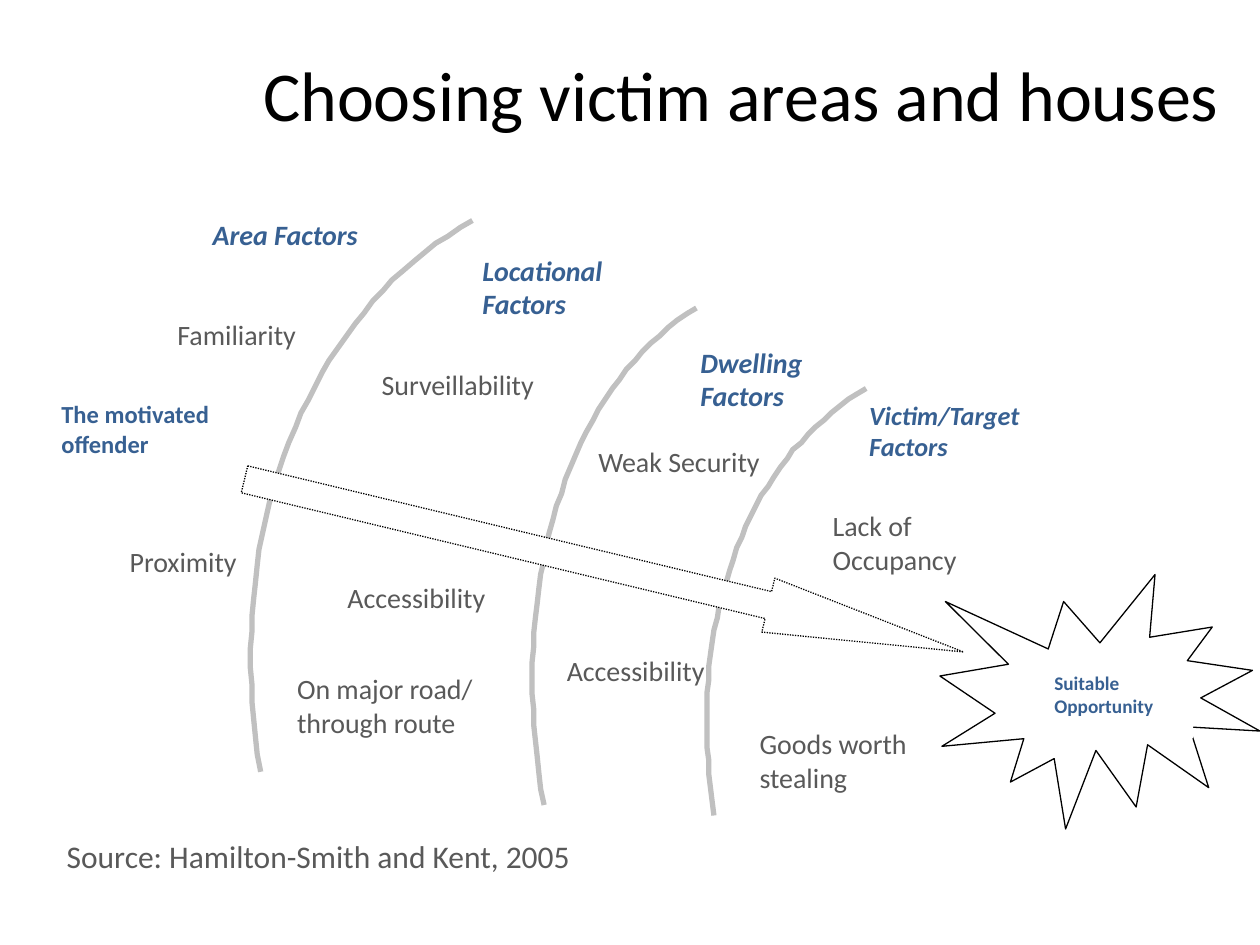
"""Build a slide on how offenders choose victim areas and houses."""
import pptx
import pptx.dml.color
import pptx.enum.dml
import pptx.enum.shapes
import pptx.enum.text
import pptx.util

Pt = pptx.util.Pt
SHAPES = pptx.enum.shapes.MSO_SHAPE
COLOURS = {"white": "FFFFFF", "black": "000000", "heading": "376092",
           "body": "595959", "arc": "C0C0C0"}

presentation = pptx.Presentation()
presentation.slide_width = Pt(720)
presentation.slide_height = Pt(540)
slide = presentation.slides.add_slide(presentation.slide_layouts[6])


def add_filled(kind, left, top, width, height, outlined=False):
    shape = slide.shapes.add_shape(kind, Pt(left), Pt(top), Pt(width), Pt(height))
    shape.shadow.inherit = False
    shape.fill.solid()
    shape.fill.fore_color.rgb = pptx.dml.color.RGBColor.from_string(COLOURS["white"])
    if outlined:
        shape.line.color.rgb = pptx.dml.color.RGBColor.from_string(COLOURS["black"])
        shape.line.width = Pt(0.75)
    else:
        shape.line.fill.background()
    return shape


def write_text(shape, text, size, colour, bold=False, italic=False, wrap=True):
    frame = shape.text_frame
    frame.text = text
    frame.word_wrap = wrap
    frame.vertical_anchor = pptx.enum.text.MSO_ANCHOR.TOP
    for paragraph in frame.paragraphs:
        paragraph.alignment = pptx.enum.text.PP_ALIGN.LEFT
        paragraph.font.name = "Calibri"
        paragraph.font.size = Pt(size)
        paragraph.font.bold = bold
        paragraph.font.italic = italic
        paragraph.font.color.rgb = pptx.dml.color.RGBColor.from_string(COLOURS[colour])


offender = add_filled(SHAPES.RECTANGLE, 28, 224.6, 115.2, 51.8)
write_text(offender, "The motivated offender", 14, "heading", bold=True)

headings = [
    ("Area Factors", 114.5, 121, 16),
    ("Locational\nFactors", 268.6, 141.1, 16),
    ("Dwelling\nFactors", 393.1, 193.7, 16),
    ("Victim/Target Factors", 489.6, 224.6, 15),
]
for text, left, top, size in headings:
    heading = add_filled(SHAPES.RECTANGLE, left, top, 115.2, 51.8)
    write_text(heading, text, size, "heading", bold=True, italic=True)

factors = [
    ("Familiarity", 94.3, 177.8, 31),
    ("Accessibility", 191.5, 328.3, 51.8),
    ("Surveillability", 211, 206.6, 51.8),
    ("Proximity", 67, 307.4, 51.8),
    ("On major road/ through route", 162.7, 380.2, 51.8),
    ("Accessibility", 316.8, 370.1, 51.8),
    ("Weak Security", 334.8, 250.6, 51.8),
    ("Lack of Occupancy", 468.7, 287.3, 41.8),
    ("Goods worth stealing", 427, 411.8, 51.8),
]
for text, left, top, height in factors:
    factor = add_filled(SHAPES.RECTANGLE, left, top, 115.2, height)
    write_text(factor, text, 16, "body")

add_filled(SHAPES.EXPLOSION1, 537.1, 328.3, 182.9, 145.4, outlined=True)

arcs = [
    [(149, 441.4), (126, 305.3), (175, 179.3), (270, 126)],
    [(311, 460), (288.7, 337), (324, 221.8), (398.2, 175.7)],
    [(408.2, 465.8), (391, 360), (424.8, 262.8), (495.4, 221.8)],
]
steps = 40
for controls in arcs:
    points = []
    for step in range(steps + 1):
        t = step / steps
        weights = [(1 - t) ** 3, 3 * t * (1 - t) ** 2, 3 * t ** 2 * (1 - t), t ** 3]
        points.append([sum(weight * control[axis] for weight, control in zip(weights, controls))
                       for axis in (0, 1)])
    builder = slide.shapes.build_freeform(*points[0], scale=Pt(1))
    builder.add_line_segments(points[1:], close=False)
    arc = builder.convert_to_shape()
    arc.shadow.inherit = False
    arc.fill.background()
    arc.line.color.rgb = pptx.dml.color.RGBColor.from_string(COLOURS["arc"])
    arc.line.width = Pt(3)

opportunity = add_filled(SHAPES.RECTANGLE, 595.4, 380.2, 86.4, 41.8)
write_text(opportunity, "Suitable Opportunity", 11, "heading", bold=True)

arrow = add_filled(SHAPES.RIGHT_ARROW, 133.9, 307.4, 422.6, 31.7, outlined=True)
arrow.adjustments[0] = 0.5
arrow.adjustments[1] = 3.62
arrow.rotation = 13.5
arrow.line.dash_style = pptx.enum.dml.MSO_LINE.ROUND_DOT

captions = [
    ("Source: Hamilton-Smith and Kent, 2005", 31, 474.5, 306, 28.8, 18, "body"),
    ("Choosing victim areas and houses", 143.3, 25.9, 566.6, 55.4, 40, "black"),
]
for text, left, top, width, height, size, colour in captions:
    caption = slide.shapes.add_textbox(Pt(left), Pt(top), Pt(width), Pt(height))
    write_text(caption, text, size, colour, wrap=False)
    caption.text_frame.auto_size = pptx.enum.text.MSO_AUTO_SIZE.SHAPE_TO_FIT_TEXT

presentation.save("out.pptx")
